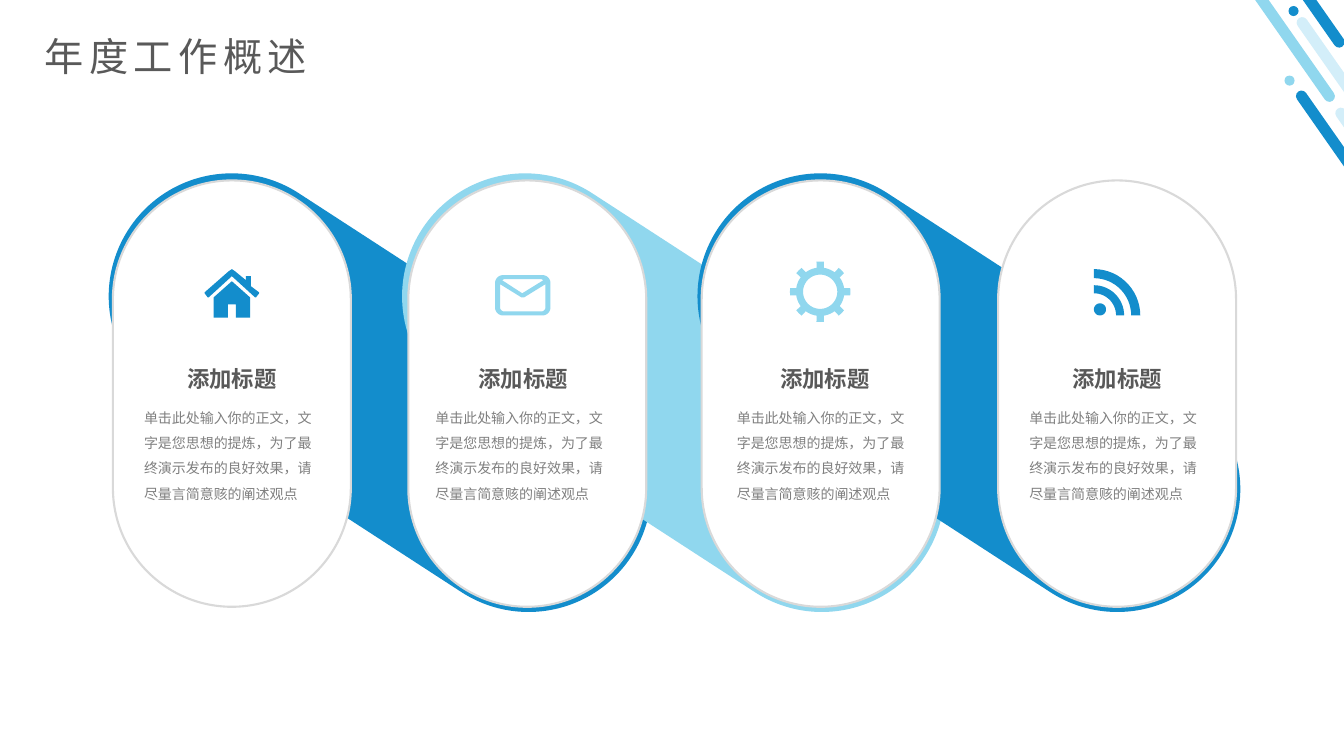
from dataclasses import dataclass
from math import cos, radians, sin

from lxml import etree
from pptx import Presentation
from pptx.dml.color import RGBColor
from pptx.enum import shapes, text
from pptx.oxml.ns import qn
from pptx.util import Inches, Pt

FONT = "Noto Sans CJK SC"
BLUE = RGBColor(0x13, 0x8D, 0xCC)
SKY = RGBColor(0x90, 0xD7, 0xEE)
PALE = RGBColor(0xD3, 0xEE, 0xF9)
WHITE = RGBColor(0xFF, 0xFF, 0xFF)
EDGE = RGBColor(0xD9, 0xD9, 0xD9)
DARK = RGBColor(0x59, 0x59, 0x59)
GREY = RGBColor(0x80, 0x80, 0x80)

ROUND = shapes.MSO_SHAPE.ROUNDED_RECTANGLE
OVAL = shapes.MSO_SHAPE.OVAL
LEFT, CENTER = text.PP_ALIGN.LEFT, text.PP_ALIGN.CENTER
TOP, MIDDLE = text.MSO_ANCHOR.TOP, text.MSO_ANCHOR.MIDDLE

HEAD = "添加标题"
BODY = "单击此处输入你的正文，文字是您思想的提炼，为了最终演示发布的良好效果，请尽量言简意赅的阐述观点"

Points = list[tuple[float, float]]


@dataclass
class Bar:
    left: float
    top: float
    width: float
    height: float
    color: RGBColor
    turn: float = 0
    kind: int = ROUND


@dataclass
class Card:
    left: float
    mid: float
    color: RGBColor
    icon: list[Points]


def arc(x: float, y: float, size: float, start: float, end: float) -> Points:
    """Points along an arc, in degrees clockwise from the right."""
    steps = max(2, round(abs(end - start) / 6))
    angles = [radians(start + (end - start) * i / steps) for i in range(steps + 1)]
    return [(x + size * cos(a), y + size * sin(a)) for a in angles]


def house() -> list[Points]:
    body = [(2.12, 2.95), (2.3, 2.79), (2.48, 2.95), (2.48, 3.15), (2.34, 3.15),
            (2.34, 3.02), (2.26, 3.02), (2.26, 3.15), (2.12, 3.15)]
    roof = [(2.03, 2.9), (2.27, 2.69), (2.3, 2.67), (2.33, 2.69), (2.44, 2.78),
            (2.44, 2.74), (2.49, 2.74), (2.49, 2.84), (2.57, 2.9), (2.57, 2.91),
            (2.54, 2.95), (2.53, 2.95), (2.3, 2.74), (2.07, 2.95), (2.06, 2.95),
            (2.03, 2.91)]
    return [body, roof]


def letter() -> list[Points]:
    rim = (arc(4.99, 2.81, 0.08, 180, 270) + arc(5.38, 2.81, 0.08, 270, 360)
           + arc(5.38, 3.05, 0.08, 0, 90) + arc(4.99, 3.05, 0.08, 90, 180))
    flap = [(4.98, 2.78), (5, 2.77), (5.37, 2.77), (5.39, 2.78), (5.18, 2.91)]
    pocket = ([(4.96, 2.82), (5.17, 2.95), (5.2, 2.95), (5.41, 2.82)]
              + arc(5.37, 3.05, 0.04, 0, 90) + arc(5, 3.05, 0.04, 90, 180))
    return [rim, flap, pocket]


def gear() -> list[Points]:
    x, y = 8.135, 2.895
    rim: Points = []
    for tooth in range(0, 360, 45):
        rim += arc(x, y, 0.3, tooth - 7, tooth + 7)
        rim += arc(x, y, 0.24, tooth + 8.5, tooth + 36.5)
    return [rim, arc(x, y, 0.17, 0, 360)]


def feed() -> list[Points]:
    x, y = 10.85, 3.13
    waves = [arc(x, y, inner, -90, 0) + arc(x, y, outer, 0, -90)
             for inner, outer in ((0.22, 0.3), (0.37, 0.46))]
    return waves + [arc(x + 0.06, y - 0.06, 0.06, 0, 360)]


def paint(shape, color: RGBColor) -> None:
    shape.shadow.inherit = False
    shape.fill.solid()
    shape.fill.fore_color.rgb = color
    shape.line.fill.background()


def draw_bar(slide, bar: Bar):
    box = map(Inches, (bar.left, bar.top, bar.width, bar.height))
    shape = slide.shapes.add_shape(bar.kind, *box)
    paint(shape, bar.color)
    shape.rotation = bar.turn
    if bar.kind == ROUND:
        shape.adjustments[0] = 0.5
    return shape


def draw_icon(slide, loops: list[Points], color: RGBColor) -> None:
    pen = None
    for loop in loops:
        first, *rest = [(Inches(x), Inches(y)) for x, y in loop]
        if pen is None:
            pen = slide.shapes.build_freeform(*first)
        else:
            pen.move_to(*first)
        pen.add_line_segments(rest, close=True)
    paint(pen.convert_to_shape(), color)


def write(shape, words: str, size: float, color: RGBColor, align=LEFT,
          anchor=MIDDLE, bold: bool = False):
    frame = shape.text_frame
    frame.word_wrap = True
    frame.auto_size = text.MSO_AUTO_SIZE.NONE
    frame.vertical_anchor = anchor
    para = frame.paragraphs[0]
    para.text = words
    para.alignment = align
    font = para.font
    font.name, font.size, font.bold = FONT, Pt(size), bold
    font.color.rgb = color
    props = para.runs[0].font._element
    etree.SubElement(props, qn("a:ea"), typeface=FONT)
    return para


def add_text(slide, left: float, top: float, width: float, height: float):
    return slide.shapes.add_textbox(*map(Inches, (left, top, width, height)))


STRIPES = [
    Bar(13.45, 0.71, 0.11, 2.19, BLUE, 325),
    Bar(12.74, 0.75, 0.1, 0.1, SKY, kind=OVAL),
    Bar(13.84, 0.88, 0.11, 2.19, PALE, 325),
    Bar(12.37, -1.51, 0.11, 2.76, SKY, 325),
    Bar(13.62, -0.07, 0.11, 2.76, PALE, 325),
    Bar(12.63, -1.53, 0.11, 2.19, BLUE, 325),
    Bar(12.78, 0.06, 0.1, 0.1, BLUE, kind=OVAL),
]
BANDS = [Bar(left, 0.92, 2.44, 5.95, color, 303)
         for left, color in ((2.55, BLUE), (5.46, SKY), (8.39, BLUE))]
CARDS = [
    Card(1.12, 2.3, BLUE, house()),
    Card(4.05, 5.19, SKY, letter()),
    Card(6.96, 8.18, SKY, gear()),
    Card(9.9, 11.08, BLUE, feed()),
]


def main() -> None:
    deck = Presentation()
    deck.slide_width, deck.slide_height = Inches(13.33), Inches(7.5)
    slide = deck.slides.add_slide(deck.slide_layouts[5])

    title = slide.shapes.title
    title.left, title.top = Inches(0.34), Inches(0.27)
    title.width, title.height = Inches(13.02), Inches(0.57)
    para = write(title, "年度工作概述", 28, DARK)
    para.runs[0].font._element.set("spc", "400")

    for bar in STRIPES + BANDS:
        draw_bar(slide, bar)
    for card in CARDS:
        pill = draw_bar(slide, Bar(card.left, 1.79, 2.36, 4.23, WHITE))
        pill.line.color.rgb = EDGE
        pill.line.width = Pt(1.5)
    for card in CARDS:
        body = add_text(slide, card.mid - 0.97, 3.93, 1.95, 0.75)
        write(body, BODY, 10, GREY, anchor=TOP).line_spacing = Pt(18)
        head = add_text(slide, card.mid - 1.14, 3.57, 2.28, 0.37)
        write(head, HEAD, 16, DARK, CENTER, bold=True)
        draw_icon(slide, card.icon, card.color)

    deck.save("out.pptx")


if __name__ == "__main__":
    main()
